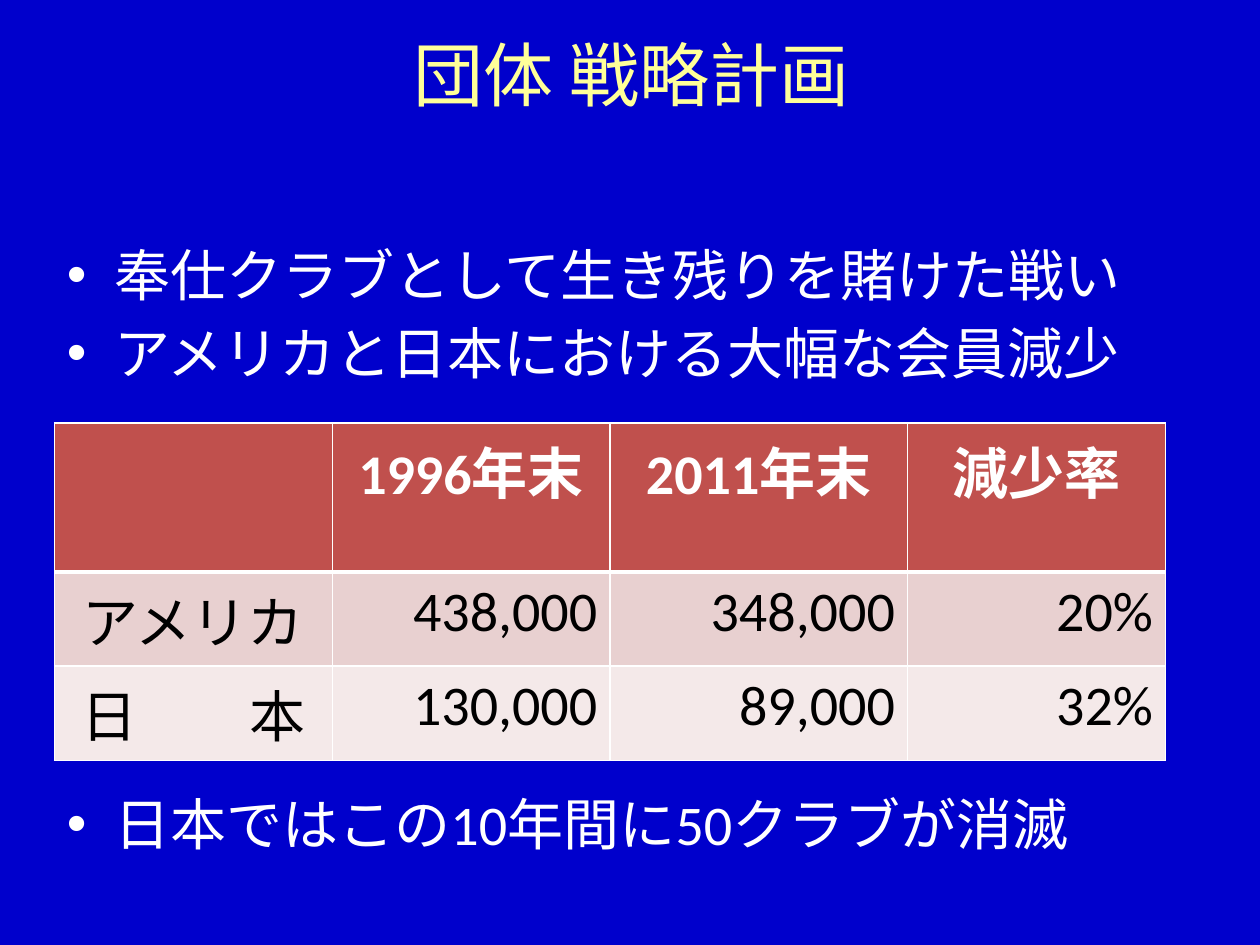
from lxml import etree
from pptx import Presentation
from pptx.dml.color import RGBColor
from pptx.enum.text import MSO_ANCHOR, PP_ALIGN
from pptx.oxml.ns import qn
from pptx.util import Cm, Pt

CENTER, RIGHT = PP_ALIGN.CENTER, PP_ALIGN.RIGHT
MIDDLE = MSO_ANCHOR.MIDDLE

TITLE = "団体 戦略計画"
BULLETS = [
    ("奉仕クラブとして生き残りを賭けた戦い", 6.4),
    ("アメリカと日本における大幅な会員減少", 6.4),
    ("日本ではこの10年間に50クラブが消滅", 230.4),
]
ROWS = [
    ("", "1996年末", "2011年末", "減少率"),
    ("アメリカ", "438,000", "348,000", "20%"),
    ("日　　本", "130,000", "89,000", "32%"),
]
LEFT = 1.1
COL_WIDTHS = [5.6, 5.6, 6, 5.2]
ROW_HEIGHTS = [3, 1.9, 1.9]
THEME = {
    "font": "Calibri", "title_size": 40, "text_size": 32,
    "background": "0000CC", "title": "FFFF99", "light": "FFFFFF", "dark": "000000",
    "rows": ["C0504D", "E8D0D0", "F4E9E9"],
}


def color(value):
    return RGBColor.from_string(value)


def style(p, size, value, align=None, bold=False):
    p.font.name = THEME["font"]
    p.font.size = Pt(size)
    p.font.bold = bold
    p.font.color.rgb = color(value)
    if align is not None:
        p.alignment = align


def add_bullet(p, indent):
    pPr = p._p.get_or_add_pPr()
    pPr.set("marL", str(indent))
    pPr.set("indent", str(-indent))
    font = etree.Element(qn("a:buFont"), typeface="Arial")
    char = etree.Element(qn("a:buChar"), char="•")
    pPr.find(qn("a:defRPr")).addprevious(font)
    font.addnext(char)


def set_borders(cell, widths):
    tcPr = cell._tc.get_or_add_tcPr()
    for side, width in zip("LRTB", widths):
        ln = etree.SubElement(tcPr, qn("a:ln" + side), w=str(Pt(width)))
        fill = etree.SubElement(ln, qn("a:solidFill"))
        etree.SubElement(fill, qn("a:srgbClr"), val=THEME["light"])


def add_title(s):
    sp = s.shapes.title
    sp.left, sp.top, sp.width, sp.height = Cm(1.3), Cm(-0.1), Cm(22.86), Cm(3.18)
    tf = sp.text_frame
    tf.text = TITLE
    tf.vertical_anchor = MIDDLE
    style(tf.paragraphs[0], THEME["title_size"], THEME["title"], CENTER)


def add_bullets(s):
    sp = s.shapes.add_textbox(Cm(LEFT), Cm(4.72), Cm(22.86), Cm(12.57))
    tf = sp.text_frame
    tf.word_wrap = True
    for i, (text, gap) in enumerate(BULLETS):
        p = tf.add_paragraph() if i else tf.paragraphs[0]
        p.text = text
        p.space_before = Pt(gap)
        style(p, THEME["text_size"], THEME["light"])
        add_bullet(p, Cm(0.95))


def add_members_table(s):
    frame = s.shapes.add_table(len(ROWS), len(COL_WIDTHS), Cm(LEFT), Cm(8.53),
                               Cm(sum(COL_WIDTHS)), Cm(sum(ROW_HEIGHTS)))
    table = frame.table
    for column, width in zip(table.columns, COL_WIDTHS):
        column.width = Cm(width)
    for i, (values, height) in enumerate(zip(ROWS, ROW_HEIGHTS)):
        table.rows[i].height = Cm(height)
        header = i == 0
        for j, value in enumerate(values):
            cell = table.cell(i, j)
            set_borders(cell, (1, 1, 3 if i == 1 else 1, 3 if header else 1))
            cell.fill.solid()
            cell.fill.fore_color.rgb = color(THEME["rows"][i])
            cell.text = value
            style(cell.text_frame.paragraphs[0], THEME["text_size"],
                  THEME["light"] if header else THEME["dark"],
                  CENTER if header or j == 0 else RIGHT, header)


def main():
    prs = Presentation()
    prs.slide_width, prs.slide_height = Cm(25.4), Cm(19.05)
    s = prs.slides.add_slide(prs.slide_layouts[5])
    s.background.fill.solid()
    s.background.fill.fore_color.rgb = color(THEME["background"])
    add_title(s)
    add_bullets(s)
    add_members_table(s)
    prs.save("out.pptx")


if __name__ == "__main__":
    main()
